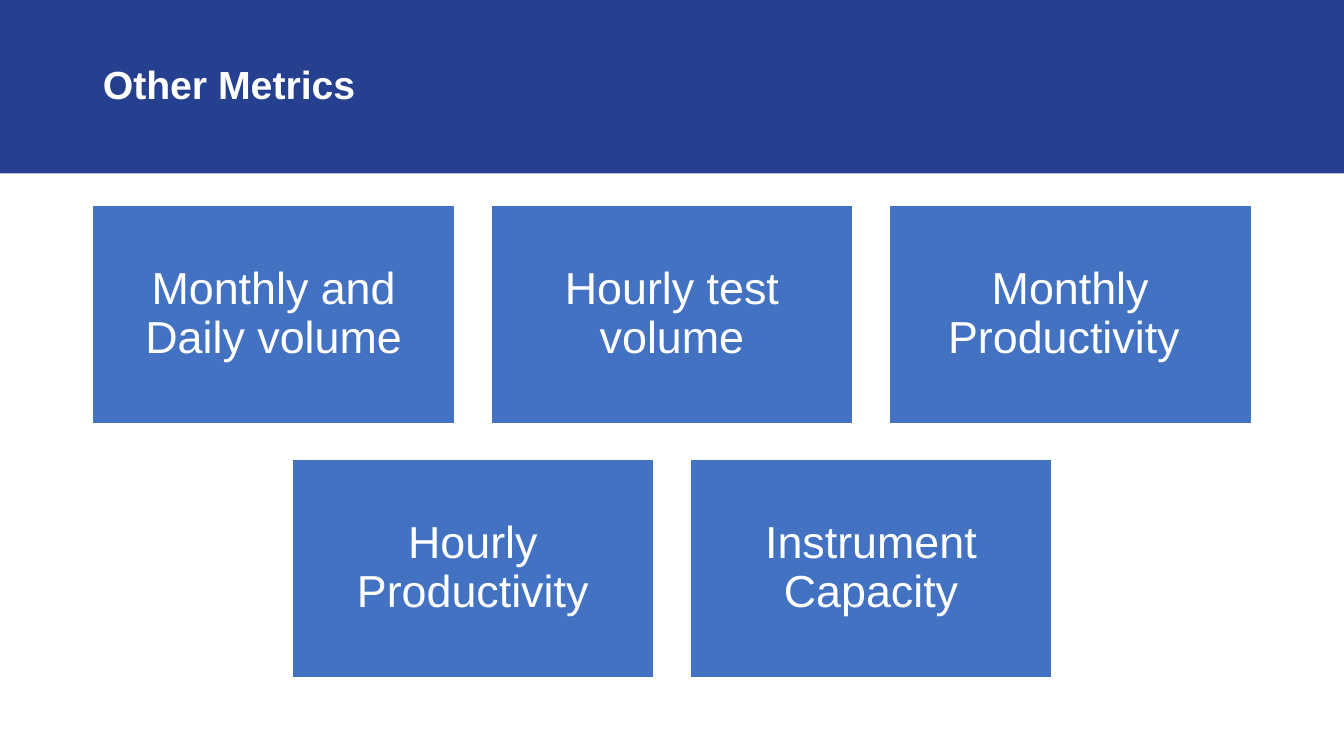
from pptx import Presentation
from pptx import util as u
from pptx.dml.color import RGBColor
from pptx.enum import shapes, text

COLORS = {"band": "25408F", "tile": "4372C3", "white": "FFFFFF"}
FONT = "Arial"
SLIDE_W, SLIDE_H = 13.33, 7.5
BAND_H = 1.72
MARGIN = 0.92
TILE_W, TILE_H = 3.59, 2.16
GAP = 0.36
TILES_TOP = 2.04
TILE_ROWS = [
    ["Monthly and Daily volume", "Hourly test volume", "Monthly Productivity "],
    ["Hourly Productivity", "Instrument Capacity"],
]


def color(name):
    return RGBColor.from_string(COLORS[name])


def add_box(page, left, top, width, height, fill):
    box = page.shapes.add_shape(
        shapes.MSO_SHAPE.RECTANGLE, *map(u.Inches, (left, top, width, height)))
    box.shadow.inherit = False
    box.fill.solid()
    box.fill.fore_color.rgb = color(fill)
    box.line.fill.background()
    return box


def write(box, words, size, align, insets, bold=False):
    """Fill a shape with one white, vertically centred paragraph."""
    frame = box.text_frame
    frame.word_wrap = True
    frame.auto_size = text.MSO_AUTO_SIZE.NONE
    frame.vertical_anchor = text.MSO_ANCHOR.MIDDLE
    across, down = map(u.Inches, insets)
    frame.margin_left = frame.margin_right = across
    frame.margin_top = frame.margin_bottom = down
    para = frame.paragraphs[0]
    para.alignment = align
    para.line_spacing = 0.9
    para.space_before = u.Pt(0)
    span = para.add_run()
    span.text = words
    span.font.name = FONT
    span.font.size = u.Pt(size)
    span.font.bold = bold
    span.font.color.rgb = color("white")


def add_header(page, words):
    band = add_box(page, 0, 0, SLIDE_W, BAND_H, "band")
    page.shapes._spTree.insert(2, band._element)  # behind the title
    title = page.shapes.title
    title.left, title.top = u.Inches(MARGIN), u.Inches(0.14)
    title.width, title.height = u.Inches(SLIDE_W - 2 * MARGIN), u.Inches(1.45)
    write(title, words, 28, text.PP_ALIGN.LEFT, (0.1, 0.05), bold=True)


def add_tile_row(page, top, labels):
    """Place equal tiles side by side, centred on the slide."""
    row_width = len(labels) * (TILE_W + GAP) - GAP
    left = (SLIDE_W - row_width) / 2
    for column, label in enumerate(labels):
        tile = add_box(page, left + column * (TILE_W + GAP), top,
                       TILE_W, TILE_H, "tile")
        tile.line.color.rgb = color("white")
        tile.line.width = u.Pt(1)
        write(tile, label, 32, text.PP_ALIGN.CENTER, (0.18, 0.18))


def main():
    deck = Presentation()
    deck.slide_width, deck.slide_height = u.Inches(SLIDE_W), u.Inches(SLIDE_H)
    page = deck.slides.add_slide(deck.slide_layouts[5])
    add_header(page, "Other Metrics")
    for row, labels in enumerate(TILE_ROWS):
        add_tile_row(page, TILES_TOP + row * (TILE_H + GAP), labels)
    deck.save("out.pptx")


if __name__ == "__main__":
    main()
